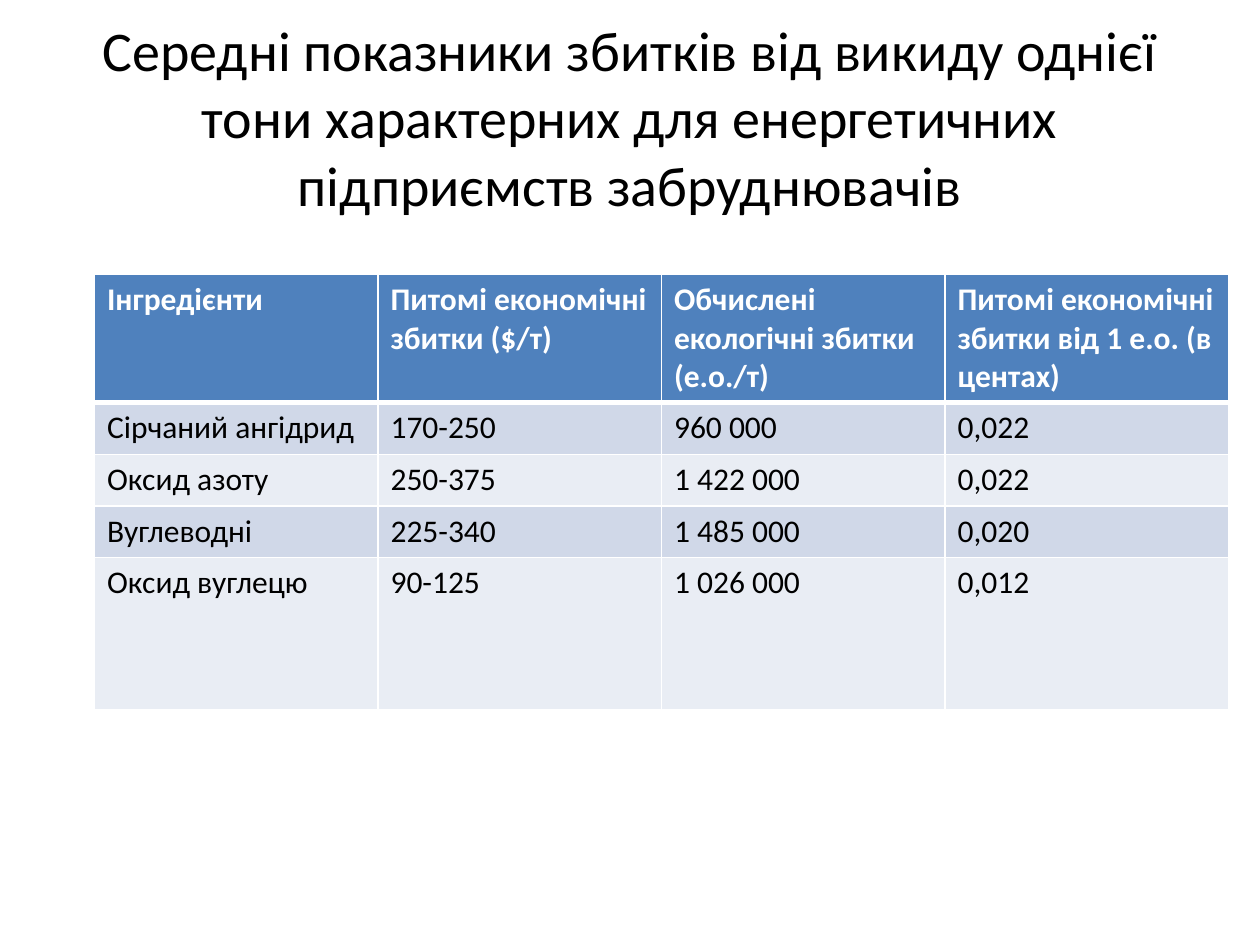
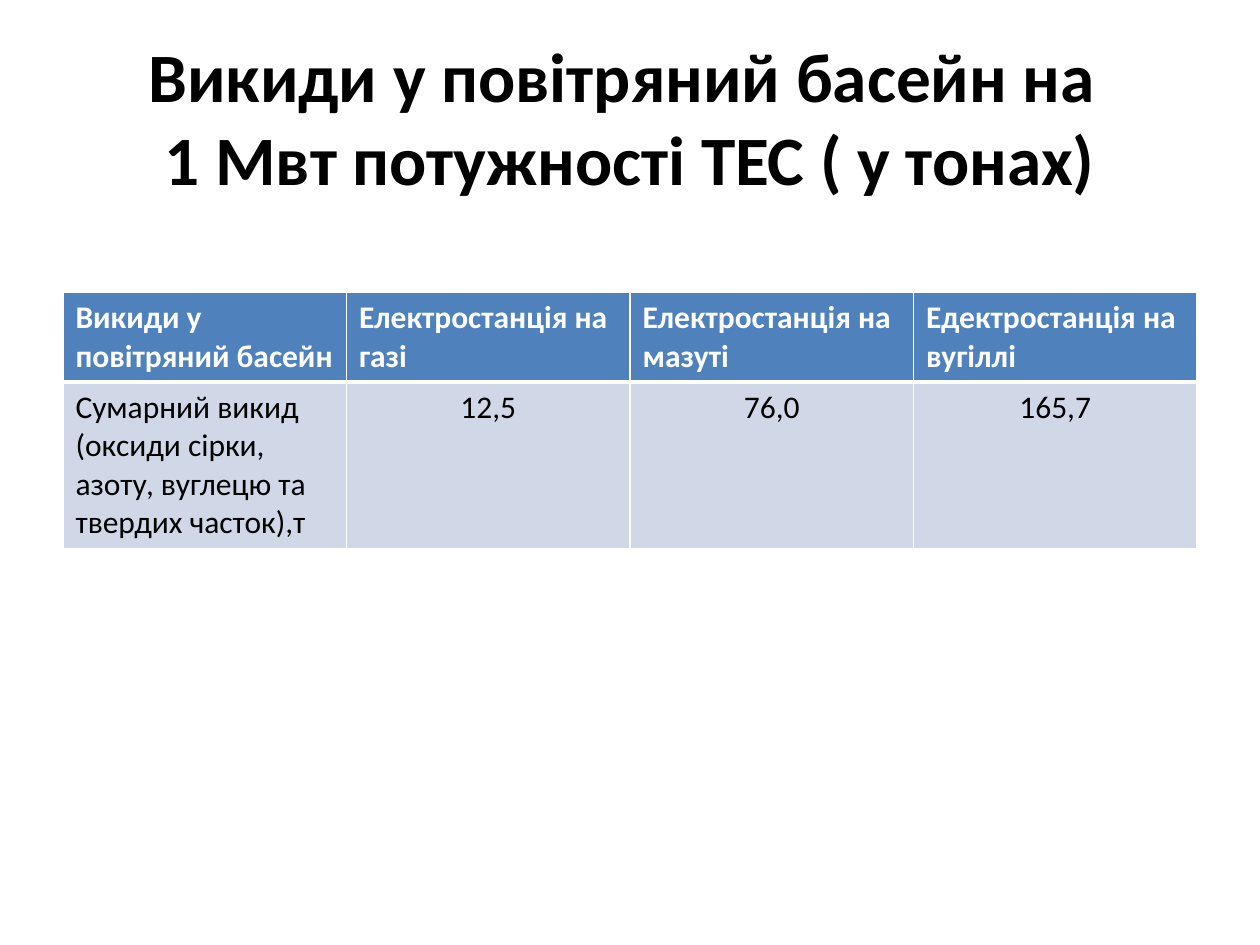
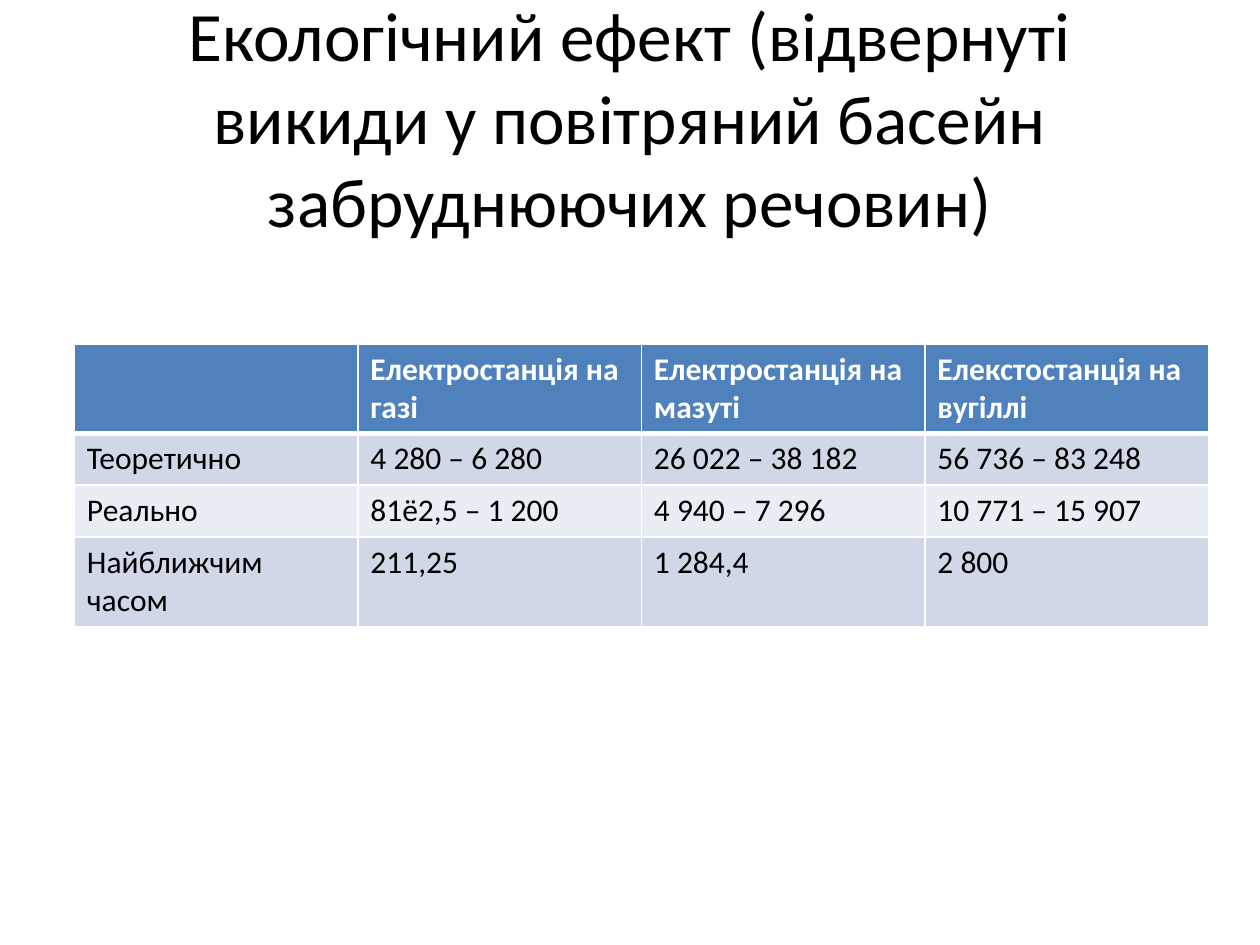
from lxml import etree
from pptx import Presentation
from pptx.dml.color import RGBColor
from pptx.enum import text
from pptx.oxml import ns
from pptx.util import Inches, Pt

FONT = "Calibri"
BLACK, WHITE = "000000", "FFFFFF"
HEADER_FILL = "4F81BD"
BAND_FILLS = ["D0D8E8", "E9EDF4"]
COLUMN_WIDTH = 2.25
ROW_HEIGHT = 0.41

SLIDES = [
    {
        "title": "Середні показники збитків від викиду однієї тони "
                 "характерних для енергетичних підприємств забруднювачів",
        "title_size": 32, "title_bold": False,
        "left": 0.75, "top": 2.18,
        "heights": [1, ROW_HEIGHT, ROW_HEIGHT, ROW_HEIGHT, 1.21],
        "center_values": False,
        "rows": [
            ["Інгредієнти", "Питомі економічні збитки ($/т)",
             "Обчислені екологічні збитки (е.о./т)",
             "Питомі економічні збитки від 1 е.о. (в центах)"],
            ["Сірчаний ангідрид", "170-250", "960 000", "0,022"],
            ["Оксид азоту", "250-375", "1 422 000", "0,022"],
            ["Вуглеводні", "225-340", "1 485 000", "0,020"],
            ["Оксид вуглецю", "90-125", "1 026 000", "0,012"],
        ],
    },
    {
        "title": "Викиди у повітряний басейн на \v1 Мвт потужності ТЕС ( у тонах)",
        "title_size": 39.6, "title_bold": True,
        "left": 0.5, "top": 2.32,
        "heights": [0.7, 1.3],
        "center_values": True,
        "rows": [
            ["Викиди у повітряний басейн", "Електростанція на газі",
             "Електростанція на мазуті", "Едектростанція на вугіллі"],
            ["Сумарний викид (оксиди сірки, азоту, вуглецю та твердих часток),т",
             "12,5", "76,0", "165,7"],
        ],
    },
    {
        "title": "Екологічний ефект (відвернуті викиди у повітряний басейн "
                 "забруднюючих речовин)",
        "title_size": 39.6, "title_bold": False,
        "left": 0.59, "top": 2.73,
        "heights": [0.7, ROW_HEIGHT, ROW_HEIGHT, 0.7],
        "center_values": False,
        "rows": [
            ["", "Електростанція на газі", "Електростанція на мазуті",
             "Елекстостанція на вугіллі"],
            ["Теоретично", "4 280 – 6 280", "26 022 – 38 182", "56 736 – 83 248"],
            ["Реально", "81ё2,5 – 1 200", "4 940 – 7 296", "10 771 – 15 907"],
            ["Найближчим часом", "211,25", "1 284,4", "2 800"],
        ],
    },
]


def format_runs(paragraph, size, color, bold):
    for run in paragraph.runs:
        run.font.name = FONT
        run.font.size = Pt(size)
        run.font.bold = bold
        run.font.color.rgb = RGBColor.from_string(color)


def add_borders(cell, top, bottom):
    """Draw white borders; call before the cell gets its fill."""
    properties = cell._tc.get_or_add_tcPr()
    for side, width in (("L", 1), ("R", 1), ("T", top), ("B", bottom)):
        line = etree.SubElement(properties, ns.qn(f"a:ln{side}"), w=str(Pt(width)))
        fill = etree.SubElement(line, ns.qn("a:solidFill"))
        etree.SubElement(fill, ns.qn("a:srgbClr"), val=WHITE)


presentation = Presentation()
presentation.slide_width = Inches(10)
presentation.slide_height = Inches(7.5)

for content in SLIDES:
    slide = presentation.slides.add_slide(presentation.slide_layouts[6])

    title = slide.shapes.add_textbox(Inches(0.5), Inches(0.3), Inches(9), Inches(1.25))
    frame = title.text_frame
    frame.word_wrap = True
    frame.auto_size = text.MSO_AUTO_SIZE.NONE
    frame.vertical_anchor = text.MSO_ANCHOR.MIDDLE
    frame.text = content["title"]
    frame.paragraphs[0].alignment = text.PP_ALIGN.CENTER
    format_runs(frame.paragraphs[0], content["title_size"], BLACK, content["title_bold"])

    rows, heights = content["rows"], content["heights"]
    column_count = len(rows[0])
    table = slide.shapes.add_table(
        len(rows), column_count, Inches(content["left"]), Inches(content["top"]),
        Inches(COLUMN_WIDTH * column_count), Inches(sum(heights))).table
    for column in table.columns:
        column.width = Inches(COLUMN_WIDTH)

    for row_index, (values, height) in enumerate(zip(rows, heights)):
        table.rows[row_index].height = Inches(height)
        is_header = row_index == 0
        fill = HEADER_FILL if is_header else BAND_FILLS[(row_index - 1) % 2]
        for column_index, value in enumerate(values):
            cell = table.cell(row_index, column_index)
            add_borders(cell, top=3 if row_index == 1 else 1, bottom=3 if is_header else 1)
            cell.fill.solid()
            cell.fill.fore_color.rgb = RGBColor.from_string(fill)
            if not value:
                continue
            cell.text_frame.text = value
            paragraph = cell.text_frame.paragraphs[0]
            if content["center_values"] and not is_header and column_index > 0:
                paragraph.alignment = text.PP_ALIGN.CENTER
            format_runs(paragraph, 18, WHITE if is_header else BLACK, is_header)

presentation.save("out.pptx")
